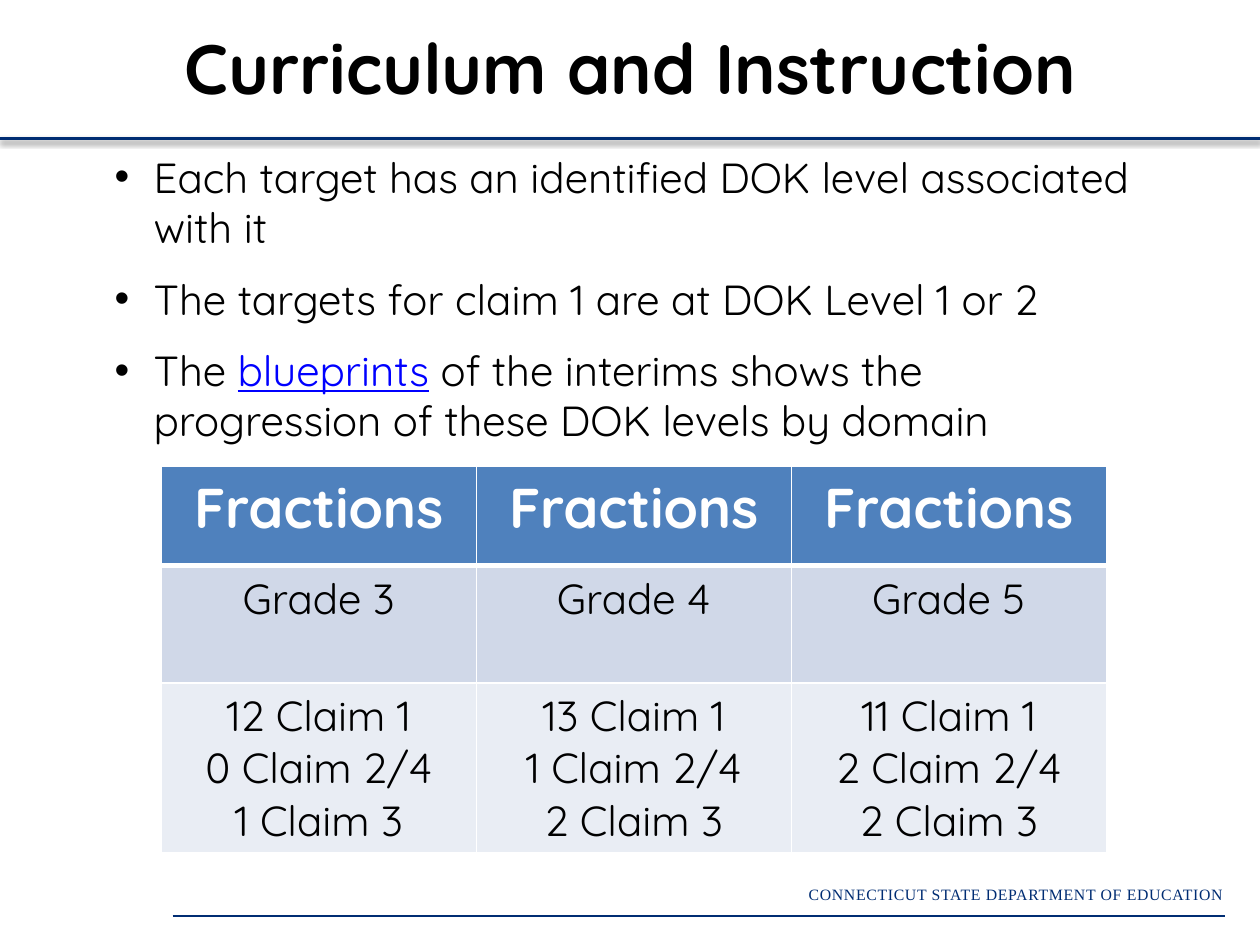
import dataclasses

import lxml.etree
import pptx
import pptx.dml.color
import pptx.enum.shapes
import pptx.enum.text
import pptx.oxml
import pptx.oxml.ns
import pptx.util

COLUMNS, ROWS = 100, 75
ALIGN = pptx.enum.text.PP_ALIGN
ANCHOR = pptx.enum.text.MSO_ANCHOR


@dataclasses.dataclass(frozen=True)
class Theme:
    font: str = "Quicksand"
    footer_font: str = "Times New Roman"
    black: str = "000000"
    white: str = "FFFFFF"
    navy: str = "002D73"
    link: str = "0000FF"
    header_fill: str = "4F81BD"
    band_fills: tuple = ("D0D8E8", "E9EDF4")
    title_size: int = 40
    header_size: int = 32
    body_size: int = 24
    footer_size: int = 9


THEME = Theme()

BULLETS = [
    ["Each target has an identified DOK level associated with it"],
    ["The targets for claim 1 are at DOK Level 1 or 2"],
    ["The ", "blueprints", " of the interims shows the progression of these DOK levels by domain"],
]
FRACTIONS = [
    ["Fractions"] * 3,
    ["Grade 3", "Grade 4", "Grade 5"],
    ["12 Claim 1\n0 Claim 2/4\n1 Claim 3",
     "13 Claim 1\n1 Claim 2/4\n2 Claim 3",
     "11 Claim 1\n2 Claim 2/4\n2 Claim 3"],
]


def across(columns):
    return round(pptx.util.Inches(10) * columns / COLUMNS)


def down(rows):
    return round(pptx.util.Inches(7.5) * rows / ROWS)


def box(left, top, width, height):
    return across(left), down(top), across(width), down(height)


def color(code):
    return pptx.dml.color.RGBColor.from_string(code)


def add_xml(parent, tag, **attributes):
    element = lxml.etree.SubElement(parent, pptx.oxml.ns.qn(tag))
    for name, value in attributes.items():
        element.set(name, str(value))
    return element


def style_font(font, size, code, bold=False, name=THEME.font):
    font.name = name
    font.size = pptx.util.Pt(size)
    font.bold = bold
    font.color.rgb = color(code)


def place(shape, area):
    shape.left, shape.top, shape.width, shape.height = area


def fill_title(title, text):
    place(title, box(0, 1.5, 100, 7.5))
    frame = title.text_frame
    frame.text = text
    frame.auto_size = pptx.enum.text.MSO_AUTO_SIZE.NONE
    frame.vertical_anchor = ANCHOR.MIDDLE
    paragraph = frame.paragraphs[0]
    paragraph.alignment = ALIGN.CENTER
    style_font(paragraph.runs[0].font, THEME.title_size, THEME.black, bold=True)


def fill_bullets(body, items):
    place(body, box(8.1, 11.5, 84.4, 28.6))
    frame = body.text_frame
    frame.auto_size = pptx.enum.text.MSO_AUTO_SIZE.NONE
    frame.vertical_anchor = ANCHOR.TOP
    indent = across(3.1)
    for index, pieces in enumerate(items):
        paragraph = frame.add_paragraph() if index else frame.paragraphs[0]
        properties = paragraph._p.get_or_add_pPr()
        properties.set("marL", str(indent))
        properties.set("indent", str(-indent))
        add_xml(properties, "a:buFont", typeface="Arial")
        add_xml(properties, "a:buChar", char="•")
        paragraph.space_before = pptx.util.Pt(0)
        paragraph.space_after = pptx.util.Pt(12)
        for piece in pieces:
            run = paragraph.add_run()
            run.text = piece
            linked = piece == "blueprints"
            style_font(run.font, THEME.body_size, THEME.link if linked else THEME.black)
            run.font.underline = linked


def set_borders(cell, widths):
    properties = cell._tc.get_or_add_tcPr()
    for index, (side, width) in enumerate(widths.items()):
        line = pptx.oxml.parse_xml(
            f'<a:ln{side} {pptx.oxml.ns.nsdecls("a")} w="{pptx.util.Pt(width)}">'
            f'<a:solidFill><a:srgbClr val="{THEME.white}"/></a:solidFill></a:ln{side}>')
        properties.insert(index, line)


def add_table(slide, rows, heights):
    area = box(12.8, 37, 75, sum(heights))
    table = slide.shapes.add_table(len(rows), len(rows[0]), *area).table
    for row_index, texts in enumerate(rows):
        table.rows[row_index].height = down(heights[row_index])
        header = row_index == 0
        fill = THEME.header_fill if header else THEME.band_fills[row_index - 1]
        widths = {"L": 1, "R": 1, "T": 3 if row_index == 1 else 1, "B": 3 if header else 1}
        for column_index, text in enumerate(texts):
            cell = table.cell(row_index, column_index)
            cell.fill.solid()
            cell.fill.fore_color.rgb = color(fill)
            set_borders(cell, widths)
            cell.text_frame.text = text
            for paragraph in cell.text_frame.paragraphs:
                paragraph.alignment = ALIGN.CENTER
                style_font(paragraph.runs[0].font,
                           THEME.header_size if header else THEME.body_size,
                           THEME.white if header else THEME.black, bold=header)


def add_rule(slide, left, right, top, width, shadow=False):
    line = slide.shapes.add_connector(
        pptx.enum.shapes.MSO_CONNECTOR.STRAIGHT,
        across(left), down(top), across(right), down(top))
    line.line.color.rgb = color(THEME.navy)
    line.line.width = pptx.util.Pt(width)
    effects = add_xml(line._element.spPr, "a:effectLst")
    if shadow:
        outer = add_xml(effects, "a:outerShdw", blurRad=pptx.util.Pt(3.1),
                        dist=pptx.util.Pt(1.6), dir=90 * 60000, rotWithShape=0)
        add_xml(add_xml(outer, "a:srgbClr", val=THEME.black), "a:alpha", val=38000)


def add_footer(slide, text):
    add_rule(slide, 13.7, 97.2, 72.7, 0.75)
    frame = slide.shapes.add_textbox(*box(51.8, 69.7, 46.2, 2.5)).text_frame
    frame.word_wrap = True
    frame.text = text
    paragraph = frame.paragraphs[0]
    paragraph.alignment = ALIGN.RIGHT
    run = paragraph.runs[0]
    style_font(run.font, THEME.footer_size, THEME.navy, name=THEME.footer_font)
    run.font._element.set("spc", "40")


def main():
    presentation = pptx.Presentation()
    presentation.slide_width = across(COLUMNS)
    presentation.slide_height = down(ROWS)
    slide = presentation.slides.add_slide(presentation.slide_layouts[1])
    fill_title(slide.shapes.title, "Curriculum and Instruction")
    fill_bullets(slide.placeholders[1], BULLETS)
    add_table(slide, FRACTIONS, [7.9, 9.3, 13])
    add_rule(slide, 0, COLUMNS, 11, 2, shadow=True)
    add_footer(slide, "CONNECTICUT STATE DEPARTMENT OF EDUCATION")
    presentation.save("out.pptx")


if __name__ == "__main__":
    main()
